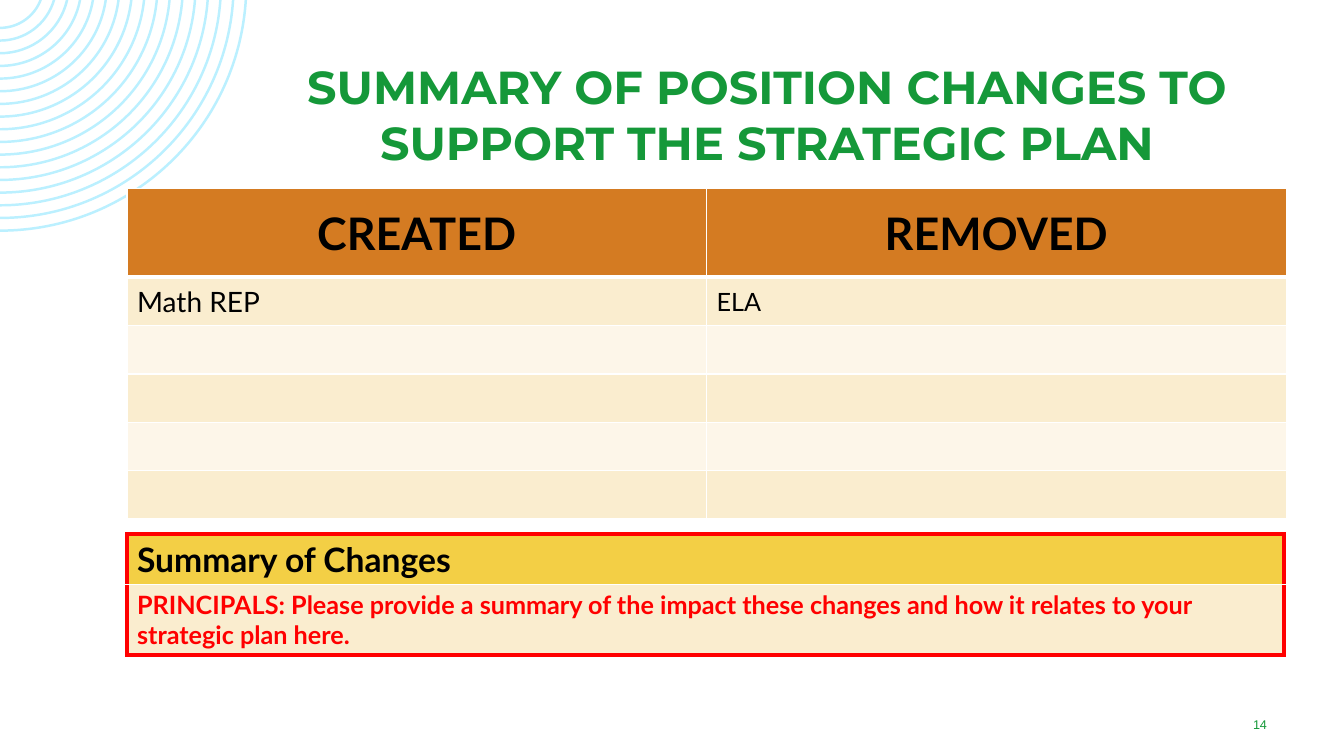
import math

import lxml.etree
import pptx
import pptx.dml.color
import pptx.enum.text
import pptx.oxml.ns
import pptx.util

COLORS = {
    "green": "159839", "ring": "BBF0FF", "orange": "D47B22", "cream": "FAEDCF",
    "pale": "FDF6E9", "yellow": "F3CF45", "red": "FF0000", "black": "000000",
    "white": "FFFFFF",
}
SLIDE_WIDTH, SLIDE_HEIGHT = pptx.util.Inches(13.333), pptx.util.Inches(7.5)
CENTER = pptx.enum.text.PP_ALIGN.CENTER
LEFT = pptx.enum.text.PP_ALIGN.LEFT
MIDDLE = pptx.enum.text.MSO_ANCHOR.MIDDLE
TOP = pptx.enum.text.MSO_ANCHOR.TOP

# Boxes are left, top, width, height in percent of the slide
BOXES = {
    "rings": (0, 0, 18.38, 30.67),
    "title": (18.45, 6.67, 77.25, 19.6),
    "positions": (9.45, 24.93, 86.25, 43.73),
    "summary": (9.45, 70.67, 86.1, 10.93),
    "number": (89.7, 93.87, 8.1, 4),
}


def place(name):
    sizes = (SLIDE_WIDTH, SLIDE_HEIGHT) * 2
    return [round(share * size / 100) for share, size in zip(BOXES[name], sizes)]


def rgb(name):
    return pptx.dml.color.RGBColor.from_string(COLORS[name])


def set_values(target, values):
    for name, value in values.items():
        setattr(target, name, value)


def write(frame, text, size, color, font="Lato", bold=False, align=LEFT, anchor=MIDDLE):
    set_values(frame, {"text": text, "word_wrap": True, "vertical_anchor": anchor})
    paragraph = frame.paragraphs[0]
    paragraph.alignment = align
    run_font = paragraph.runs[0].font
    set_values(run_font, {"size": pptx.util.Pt(size), "name": font, "bold": bold})
    run_font.color.rgb = rgb(color)


def style_cell(cell, fill, borders):
    """Borders map a side (L, R, T, B) to a colour and a width in points."""
    properties = cell._tc.get_or_add_tcPr()
    qn = pptx.oxml.ns.qn
    for side in "LRTB":
        color, width = borders[side]
        line = lxml.etree.SubElement(properties, qn(f"a:ln{side}"), w=str(pptx.util.Pt(width)))
        solid = lxml.etree.SubElement(line, qn("a:solidFill"))
        lxml.etree.SubElement(solid, qn("a:srgbClr"), val=COLORS[color])
    cell.fill.solid()
    cell.fill.fore_color.rgb = rgb(fill)


def add_plain_table(slide, box, columns, row_shares):
    table = slide.shapes.add_table(len(row_shares), columns, *box).table
    set_values(table, {"first_row": False, "horz_banding": False})
    for row, share in zip(table.rows, row_shares):
        row.height = round(box[3] * share / sum(row_shares))
    return table


def bend(shape):
    """Turn the two runs of three segments in each ring into curves."""
    qn = pptx.oxml.ns.qn
    segments = list(shape._element.iter(qn("a:lnTo")))
    for first in range(0, len(segments), 7):
        for start in (first, first + 4):
            curve, *others = segments[start:start + 3]
            curve.tag = qn("a:cubicBezTo")
            for other in others:
                curve.append(other[0])
                other.getparent().remove(other)


def add_rings(slide, box):
    left, top, width, height = box
    ring_count, thickness = 17, 0.01 * width
    # The common centre lies above the slide's corner
    rise = (width ** 2 - height ** 2) / (2 * height)
    outer_radius = height + rise
    gap = (outer_radius - 0.13 * width) / ring_count

    def arc(radius):
        """Ends and control points of the arc from the top edge to the left edge."""
        start = math.asin(rise / radius)
        reach = radius * math.tan((math.pi / 2 - start) / 4) * 4 / 3
        x, y = radius * math.cos(start), rise
        points = [(x, y), (x - reach * math.sin(start), y + reach * math.cos(start)),
                  (reach, radius), (0, radius)]
        return [(left + x, top + y - rise) for x, y in points]

    builder = None
    for ring in range(ring_count):
        radius = outer_radius - ring * gap
        outline = arc(radius) + arc(radius - thickness)[::-1]
        if builder is None:
            builder = slide.shapes.build_freeform(*outline[0])
        else:
            builder.move_to(*outline[0])
        builder.add_line_segments(outline[1:], close=True)
    shape = builder.convert_to_shape()
    bend(shape)
    shape.shadow.inherit = False
    shape.fill.solid()
    shape.fill.fore_color.rgb = rgb("ring")
    shape.line.fill.background()


def add_title(slide, box):
    title = slide.shapes.title
    set_values(title, dict(zip(("left", "top", "width", "height"), box)))
    write(title.text_frame, "SUMMARY OF POSITION CHANGES TO SUPPORT THE STRATEGIC PLAN",
          33, "green", "Montserrat", True, CENTER, TOP)
    set_values(title.text_frame, {"auto_size": pptx.enum.text.MSO_AUTO_SIZE.NONE,
                                  "margin_top": pptx.util.Inches(0.08)})


def add_positions(slide, box):
    table = add_plain_table(slide, box, 2, [0.88] + [0.48] * 5)
    thin = dict.fromkeys("LRTB", ("white", 1))
    thick = ("white", 3)
    entries = [("CREATED", "Math REP", 20), ("REMOVED", "ELA", 18)]
    for column, (heading, position, size) in enumerate(entries):
        style_cell(table.cell(0, column), "orange", {**thin, "B": thick})
        write(table.cell(0, column).text_frame, heading, 32, "black", bold=True, align=CENTER)
        table.cell(0, column).vertical_anchor = MIDDLE
        for row in range(1, 6):
            borders = {**thin, "T": thick} if row == 1 else thin
            style_cell(table.cell(row, column), "cream" if row % 2 else "pale", borders)
        write(table.cell(1, column).text_frame, position, size, "black")
        table.cell(1, column).vertical_anchor = MIDDLE


def add_summary(slide, box):
    table = add_plain_table(slide, box, 1, [1, 1])
    frame = dict.fromkeys("LRTB", ("red", 3))
    rows = [
        ("Summary of Changes", 24, "black", "yellow", "B"),
        ("PRINCIPALS: Please provide a summary of the impact these changes and how it "
         "relates to your strategic plan here.", 18, "red", "cream", "T"),
    ]
    for row, (text, size, color, fill, inner_side) in enumerate(rows):
        cell = table.cell(row, 0)
        style_cell(cell, fill, {**frame, inner_side: ("white", 1)})
        write(cell.text_frame, text, size, color, bold=True, anchor=TOP)


def add_number(slide, box):
    frame = slide.shapes.add_textbox(*box).text_frame
    write(frame, "14", 9, "green", "Arial", align=CENTER)


def main():
    presentation = pptx.Presentation()
    set_values(presentation, {"slide_width": SLIDE_WIDTH, "slide_height": SLIDE_HEIGHT})
    slide = presentation.slides.add_slide(presentation.slide_layouts[5])
    add_rings(slide, place("rings"))
    add_title(slide, place("title"))
    add_positions(slide, place("positions"))
    add_number(slide, place("number"))
    add_summary(slide, place("summary"))
    presentation.save("out.pptx")


if __name__ == "__main__":
    main()
